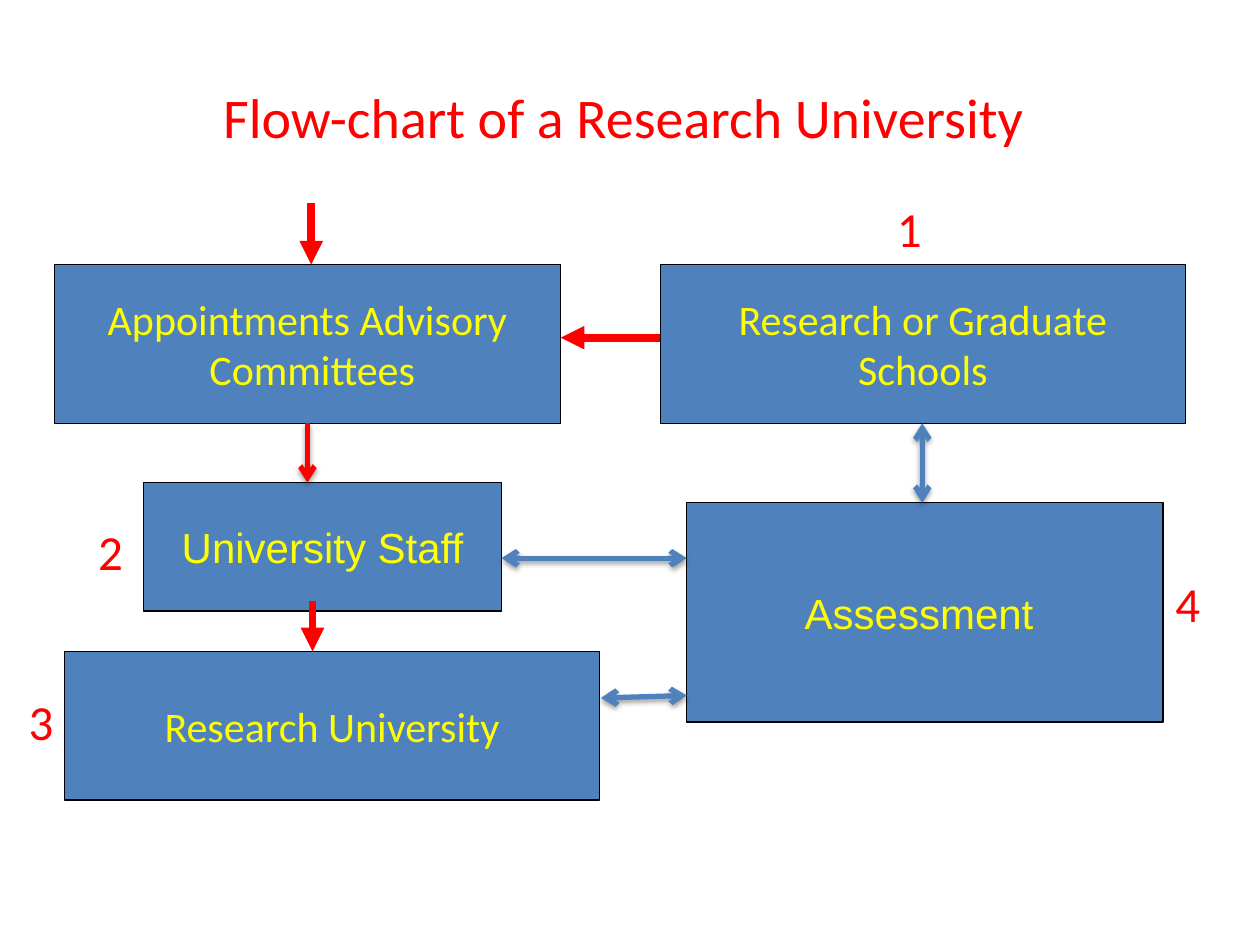
from lxml import etree
from pptx import Presentation
from pptx.dml.color import RGBColor
from pptx.enum.shapes import MSO_CONNECTOR, MSO_SHAPE
from pptx.enum.text import MSO_ANCHOR, PP_ALIGN
from pptx.oxml import parse_xml
from pptx.oxml.ns import nsdecls, qn
from pptx.util import Inches, Pt

RECT = MSO_SHAPE.RECTANGLE
STRAIGHT = MSO_CONNECTOR.STRAIGHT
MIDDLE, TOP = MSO_ANCHOR.MIDDLE, MSO_ANCHOR.TOP
LEFT, CENTER = PP_ALIGN.LEFT, PP_ALIGN.CENTER
RED, BLUE, YELLOW, BLACK = "FF0000", "4F81BD", "FFFF00", "000000"

BOXES = [
    (0.43, 2.1, 4.02, 1.26, "Appointments Advisory\n Committees", "Calibri"),
    (5.24, 2.1, 4.17, 1.26, "Research or Graduate\nSchools", "Calibri"),
    (1.14, 3.83, 2.84, 1.02, "University Staff", "Arial"),
    (5.45, 3.99, 3.78, 1.74, "Assessment ", "Arial"),
    (0.51, 5.17, 4.25, 1.18, "Research University", "Calibri"),
]
BOLD_ARROWS = [
    (2.48, 4.77, 2.48, 5.17),
    (2.47, 1.61, 2.47, 2.1),
    (5.24, 2.68, 4.45, 2.68),
]
DOUBLE_ARROWS = [
    (3.98, 4.43, 5.45, 4.43),
    (4.77, 5.54, 5.45, 5.52),
    (7.32, 3.99, 7.32, 3.36),
]
NUMBERS = [
    (7.02, 1.53, 1.07, 0.57, "1"),
    (0.68, 4.09, 0.63, 0.88, "2"),
    (0.13, 5.44, 0.43, 0.57, "3"),
    (9.23, 4.5, 0.51, 0.57, "4"),
]
SHADOW = (
    f'<a:effectLst {nsdecls("a")}><a:outerShdw blurRad="{Pt(3.1)}" dist="{Pt(1.6)}" '
    'dir="5400000" rotWithShape="0"><a:srgbClr val="000000"><a:alpha val="38000"/>'
    '</a:srgbClr></a:outerShdw></a:effectLst>'
)
NO_EFFECT = f'<a:effectLst {nsdecls("a")}/>'


def rgb(color):
    """Return the colour for a hex string."""
    return RGBColor.from_string(color)


def write(tf, text, size=24, font="Calibri", color=YELLOW, align=CENTER,
          anchor=MIDDLE, wrap=True):
    """Fill a text frame, one paragraph per line of text."""
    tf.word_wrap = wrap
    tf.vertical_anchor = anchor
    for i, line in enumerate(text.split("\n")):
        p = tf.add_paragraph() if i else tf.paragraphs[0]
        p.alignment = align
        r = p.add_run()
        r.text = line
        r.font.size = Pt(size)
        r.font.name = font
        r.font.color.rgb = rgb(color)


def add_text(s, x, y, w, h, text, **style):
    """Add a text box."""
    sp = s.shapes.add_textbox(Inches(x), Inches(y), Inches(w), Inches(h))
    write(sp.text_frame, text, **style)


def add_box(s, x, y, w, h, text, font):
    """Add a labelled rectangle of the flow chart."""
    sp = s.shapes.add_shape(RECT, Inches(x), Inches(y), Inches(w), Inches(h))
    sp.shadow.inherit = False
    sp.fill.solid()
    sp.fill.fore_color.rgb = rgb(BLUE)
    sp.line.color.rgb = rgb(BLACK)
    sp.line.width = Pt(0.75)
    write(sp.text_frame, text, font=font, wrap=False)


def add_arrow(s, x1, y1, x2, y2, color=RED, width=3, head=None, tail="arrow",
              effect=SHADOW):
    """Add a straight arrow with the given ends."""
    c = s.shapes.add_connector(STRAIGHT, Inches(x1), Inches(y1), Inches(x2), Inches(y2))
    c.line.color.rgb = rgb(color)
    c.line.width = Pt(width)
    ln = c.line._get_or_add_ln()
    for tag, kind in (("a:headEnd", head), ("a:tailEnd", tail)):
        if kind:
            etree.SubElement(ln, qn(tag), type=kind)
    c._element.spPr.append(parse_xml(effect))


def main():
    """Build the slide and save it."""
    prs = Presentation()
    prs.slide_width, prs.slide_height = Inches(10), Inches(7.5)
    s = prs.slides.add_slide(prs.slide_layouts[6])
    add_text(s, 0.5, 0.3, 9, 1.25, "Flow-chart of a Research University ",
             size=32, color=RED)
    for box in BOXES:
        add_box(s, *box)
    for ends in BOLD_ARROWS:
        add_arrow(s, *ends, width=4.5, tail="triangle", effect=NO_EFFECT)
    for ends in DOUBLE_ARROWS:
        add_arrow(s, *ends, color=BLUE, head="arrow")
    add_arrow(s, 2.44, 3.36, 2.44, 3.83)
    for number in NUMBERS:
        add_text(s, *number, size=28, color=RED, align=LEFT, anchor=TOP)
    prs.save("out.pptx")


if __name__ == "__main__":
    main()
